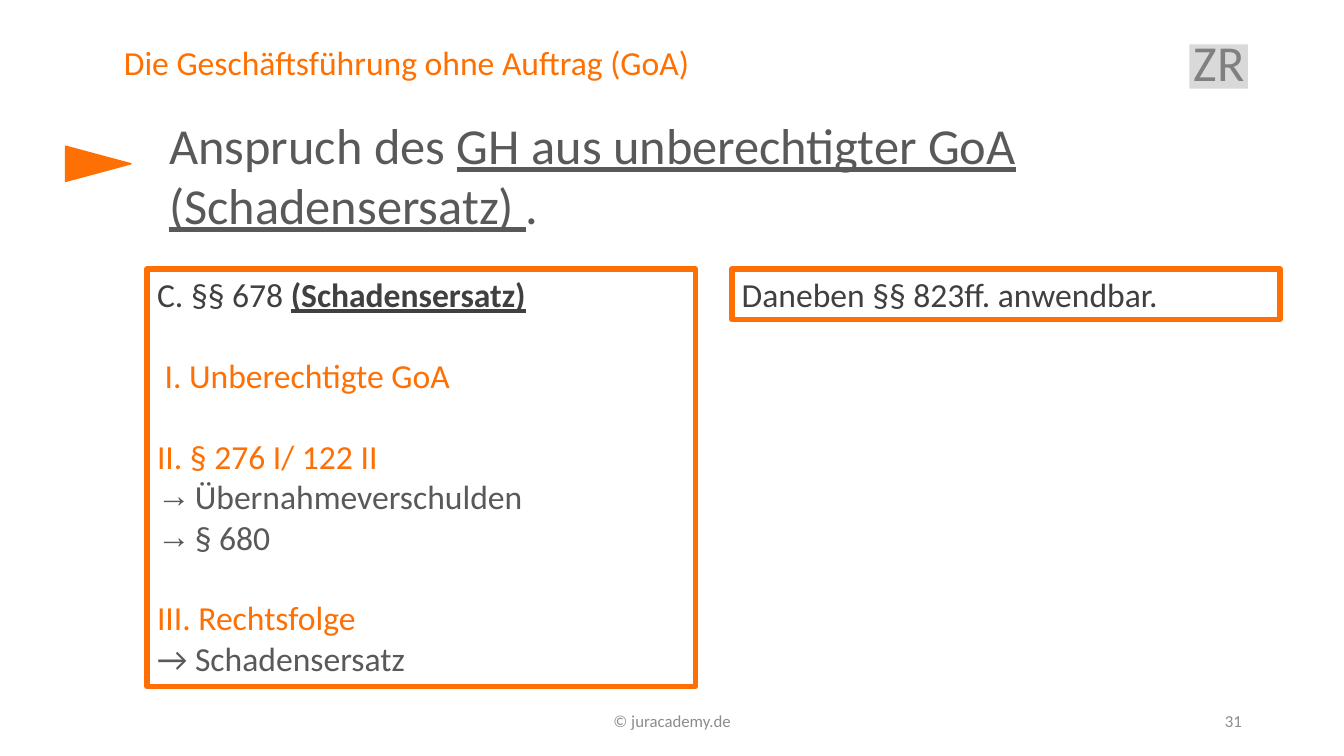
from lxml import etree
from pptx import Presentation
from pptx.dml.color import RGBColor
from pptx.enum.shapes import MSO_SHAPE
from pptx.enum.text import MSO_ANCHOR, MSO_AUTO_SIZE, PP_ALIGN
from pptx.oxml.ns import qn
from pptx.util import Pt

LEFT, CENTER, RIGHT = PP_ALIGN.LEFT, PP_ALIGN.CENTER, PP_ALIGN.RIGHT
TOP, MIDDLE = MSO_ANCHOR.TOP, MSO_ANCHOR.MIDDLE
GROW = MSO_AUTO_SIZE.SHAPE_TO_FIT_TEXT
RECTANGLE, TRIANGLE = MSO_SHAPE.RECTANGLE, MSO_SHAPE.ISOSCELES_TRIANGLE

FONT = "Calibri"
ORANGE, TITLE_ORANGE = "FE7004", "FF7001"
DARK, BODY = "404040", "595959"
BADGE, BADGE_TEXT, FOOTER = "D9D9D9", "808080", "8C8C8C"
SECTION_GAP = 29
BULLET_INDENT = 27


def color(value):
    """Turn a hex string into a colour."""
    return RGBColor.from_string(value)


def add_shape(slide, kind, box, fill=None, line=None, line_width=1):
    """Add a preset shape without shadow."""
    shape = slide.shapes.add_shape(kind, *map(Pt, box))
    shape.shadow.inherit = False
    if fill:
        shape.fill.solid()
        shape.fill.fore_color.rgb = color(fill)
    else:
        shape.fill.background()
    if line:
        shape.line.color.rgb = color(line)
        shape.line.width = Pt(line_width)
    else:
        shape.line.fill.background()
    return shape


def add_run(paragraph, text, size, text_color, emphasis=""):
    """Add a run; emphasis may hold b for bold and u for underline."""
    run = paragraph.add_run()
    run.text = text
    run.font.name = FONT
    run.font.size = Pt(size)
    run.font.color.rgb = color(text_color)
    run.font.bold = "b" in emphasis
    run.font.underline = "u" in emphasis


def set_bullet(paragraph, character):
    """Give a paragraph a hanging bullet."""
    properties = paragraph._p.get_or_add_pPr()
    properties.set("marL", str(Pt(BULLET_INDENT)))
    properties.set("indent", str(-Pt(BULLET_INDENT)))
    etree.SubElement(properties, qn("a:buFont")).set("typeface", "Arial")
    etree.SubElement(properties, qn("a:buChar")).set("char", character)


def fill_text(shape, paragraphs, size, align=LEFT, anchor=TOP, spacing=None):
    """Write paragraphs given as (runs, space before, left margin, bullet)."""
    frame = shape.text_frame
    frame.word_wrap = True
    frame.vertical_anchor = anchor
    for index, (runs, before, margin, bullet) in enumerate(paragraphs):
        paragraph = frame.add_paragraph() if index else frame.paragraphs[0]
        if bullet:
            set_bullet(paragraph, bullet)
        elif margin:
            paragraph._p.get_or_add_pPr().set("marL", str(Pt(margin)))
        paragraph.alignment = align
        if before:
            paragraph.space_before = Pt(before)
        if spacing:
            paragraph.line_spacing = spacing
        for run in runs:
            add_run(paragraph, run[0], size, *run[1:])


def line(*runs, before=0, margin=0, bullet=None):
    """Describe one paragraph."""
    return runs, before, margin, bullet


def add_label(slide, box, runs, size, **layout):
    """Add a text box with a single paragraph."""
    label = slide.shapes.add_textbox(*map(Pt, box))
    fill_text(label, [line(*runs)], size, **layout)
    return label


def add_panel(slide, left, height, paragraphs):
    """Add an orange framed text panel."""
    panel = add_shape(slide, RECTANGLE, (left, 192.2, 391.7, height),
                      line=ORANGE, line_width=4)
    fill_text(panel, paragraphs, 24)
    panel.text_frame.auto_size = GROW


def main():
    """Build the slide and save it."""
    presentation = Presentation()
    presentation.slide_width, presentation.slide_height = Pt(960), Pt(540)
    slide = presentation.slides.add_slide(presentation.slide_layouts[6])

    add_shape(slide, RECTANGLE, (849.6, 31.7, 41.8, 31.7), fill=BADGE)
    add_label(slide, (81.4, 29.5, 719.3, 33.8),
              [("Die Geschäftsführung ohne Auftrag (GoA)", TITLE_ORANGE)],
              24, spacing=0.9)
    add_label(slide, (318.2, 500.4, 324, 28.8), [("© juracademy.de", FOOTER)],
              12, align=CENTER, anchor=MIDDLE)
    add_label(slide, (678.2, 500.4, 216, 28.8), [("31", FOOTER)],
              12, align=RIGHT, anchor=MIDDLE)
    add_label(slide, (839.5, 23.8, 62.6, 54), [("ZR", BADGE_TEXT)],
              36, align=CENTER, spacing=0.9)

    pointer = add_shape(slide, TRIANGLE, (57.6, 93.6, 25.2, 46.8),
                        fill=ORANGE, line=ORANGE)
    pointer.rotation = 90
    heading = add_label(slide, (113.8, 77.8, 779.8, 94.3), [
        ("Anspruch des ", BODY),
        ("GH aus unberechtigter GoA (Schadensersatz) ", BODY, "u"),
        (".", BODY)], 36)
    heading.text_frame.auto_size = GROW

    add_panel(slide, 105.1, 298.1, [
        line(("C. §§ 678 ", DARK), ("(Schadensersatz)", DARK, "bu")),
        line(("I. Unberechtigte GoA", ORANGE), before=SECTION_GAP, margin=5.4),
        line(("II. § 276 I/ 122 II", ORANGE), before=SECTION_GAP),
        line(("Übernahmeverschulden", BODY), bullet="→"),
        line(("§ 680", BODY), bullet="→"),
        line(("III. Rechtsfolge", ORANGE), before=SECTION_GAP),
        line(("→ Schadensersatz", BODY)),
    ])
    add_panel(slide, 522.7, 36, [line(("Daneben §§ 823ff. anwendbar.", DARK))])

    presentation.save("out.pptx")


if __name__ == "__main__":
    main()
